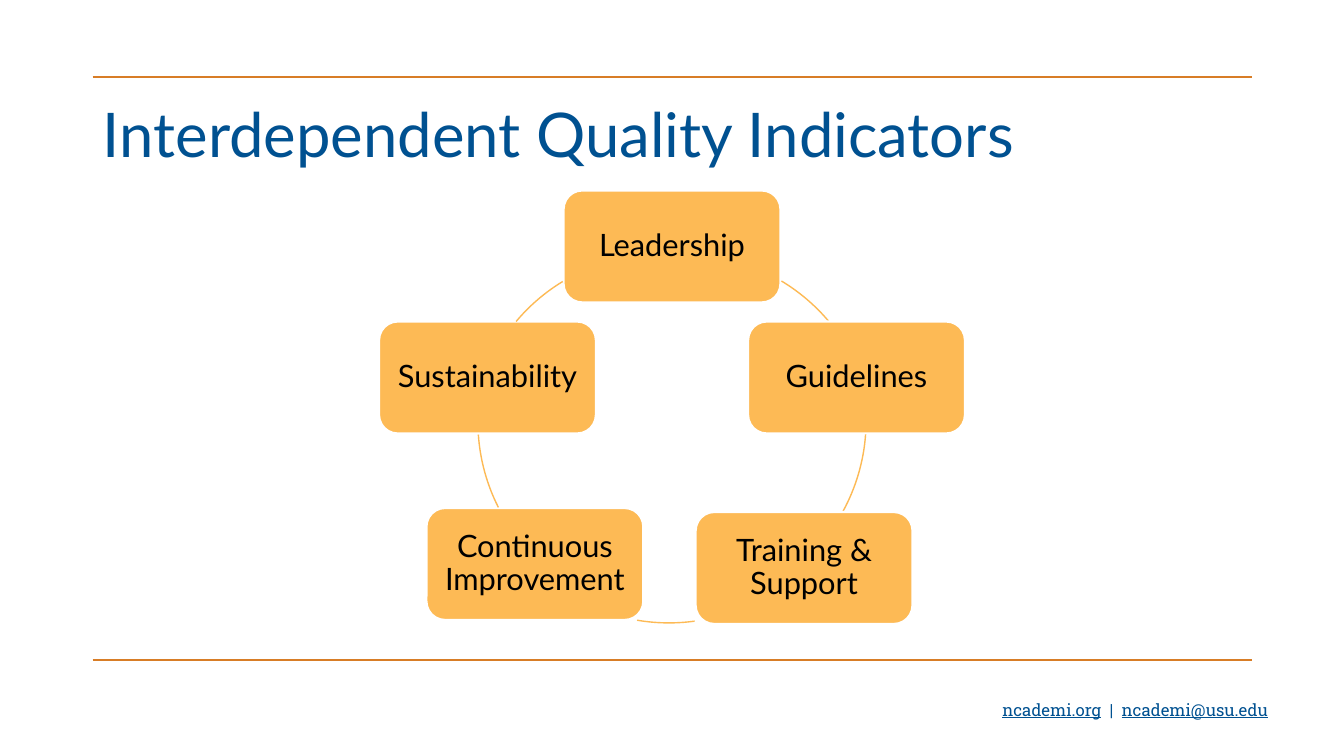
from dataclasses import dataclass

from lxml import etree
from pptx import Presentation
from pptx.dml.color import RGBColor
from pptx.enum import shapes as kinds, text as styles
from pptx.oxml import ns
from pptx.util import Inches, Pt


@dataclass(frozen=True)
class Theme:
    blue: str = "005191"
    rust: str = "D87D26"
    gold: str = "FDBA55"
    white: str = "FFFFFF"
    black: str = "000000"
    sans: str = "Lato"
    slab: str = "Roboto Slab"
    title: int = 44
    node: int = 22
    foot: int = 12


THEME = Theme()

# Label, node offset, then offset and angles of the arc that follows
NODE = (2.15, 1.11)
RING = 3.75
CYCLE = [
    ("Leadership", (1.83, 0), (1.15, 0.63), (301, 319.8)),
    ("Guidelines", (3.66, 1.3), (1.08, 0.41), (4.1, 28.6)),
    ("Training & Support", (3.14, 3.19), (1, 0.54), (82.2, 99.7)),
    ("Continuous Improvement", (0.47, 3.15), (0.98, 0.42), (153.1, 176.2)),
    ("Sustainability", (0, 1.3), (0.92, 0.63), (220, 238.7)),
]


def add_run(para, words, font, size, color, under=None):
    run = para.add_run()
    run.text = words
    run.font.name = font
    run.font.size = Pt(size)
    run.font.color.rgb = RGBColor.from_string(color)
    run.font.underline = under


def set_line(item, color, width):
    item.line.color.rgb = RGBColor.from_string(color)
    item.line.width = Pt(width)


def add_rule(slide, left, top, width):
    rule = slide.shapes.add_connector(
        kinds.MSO_CONNECTOR.STRAIGHT,
        Inches(left), Inches(top), Inches(left + width), Inches(top))
    set_line(rule, THEME.rust, 1.5)
    etree.SubElement(rule.element.spPr, ns.qn("a:effectLst"))


def add_title(slide, left, top, width, height):
    title = slide.shapes.title
    title.left, title.top = Inches(left), Inches(top)
    title.width, title.height = Inches(width), Inches(height)
    frame = title.text_frame
    frame.vertical_anchor = styles.MSO_ANCHOR.MIDDLE
    para = frame.paragraphs[0]
    para.alignment = styles.PP_ALIGN.LEFT
    para.line_spacing = 0.9
    add_run(para, "Interdependent Quality Indicators",
            THEME.sans, THEME.title, THEME.blue)


def add_node(slide, label, left, top):
    node = slide.shapes.add_shape(
        kinds.MSO_SHAPE.ROUNDED_RECTANGLE,
        Inches(left), Inches(top), Inches(NODE[0]), Inches(NODE[1]))
    node.shadow.inherit = False
    node.fill.solid()
    node.fill.fore_color.rgb = RGBColor.from_string(THEME.gold)
    set_line(node, THEME.white, 1.5)
    frame = node.text_frame
    frame.word_wrap = True
    frame.vertical_anchor = styles.MSO_ANCHOR.MIDDLE
    frame.margin_left = frame.margin_right = Inches(0.09)
    frame.margin_top = frame.margin_bottom = Inches(0.09)
    para = frame.paragraphs[0]
    para.alignment = styles.PP_ALIGN.CENTER
    para.line_spacing = 0.9
    add_run(para, label, THEME.sans, THEME.node, THEME.black)


def add_arc(slide, left, top, angles):
    arc = slide.shapes.add_shape(
        kinds.MSO_SHAPE.ARC,
        Inches(left), Inches(top), Inches(RING), Inches(RING))
    arc.shadow.inherit = False
    arc.fill.background()
    set_line(arc, THEME.gold, 1)
    # Angles are stored as 60000ths of a degree, scaled by 100000
    for i, angle in enumerate(angles):
        arc.adjustments[i] = angle * 0.6


def add_cycle(slide, left, top):
    for label, spot, ring, angles in CYCLE:
        add_node(slide, label, left + spot[0], top + spot[1])
        add_arc(slide, left + ring[0], top + ring[1], angles)


def add_footer(slide, left, top, width, height):
    box = slide.shapes.add_textbox(
        Inches(left), Inches(top), Inches(width), Inches(height))
    frame = box.text_frame
    frame.word_wrap = True
    para = frame.paragraphs[0]
    para.alignment = styles.PP_ALIGN.CENTER
    for words, under in (("ncademi.org", True), ("  |  ", False),
                         ("ncademi@usu.edu", True)):
        add_run(para, words, THEME.slab, THEME.foot, THEME.blue, under)


def main():
    deck = Presentation()
    deck.slide_width, deck.slide_height = Inches(13.33), Inches(7.5)
    slide = deck.slides.add_slide(deck.slide_layouts[5])
    # Frame
    for top in (0.76, 6.55):
        add_rule(slide, 0.92, top, 11.5)
    add_footer(slide, 8.24, 6.89, 6.04, 0.3)
    # Content
    add_title(slide, 0.92, 0.9, 11.5, 0.92)
    add_cycle(slide, 3.76, 1.89)
    deck.save("out.pptx")


if __name__ == "__main__":
    main()
